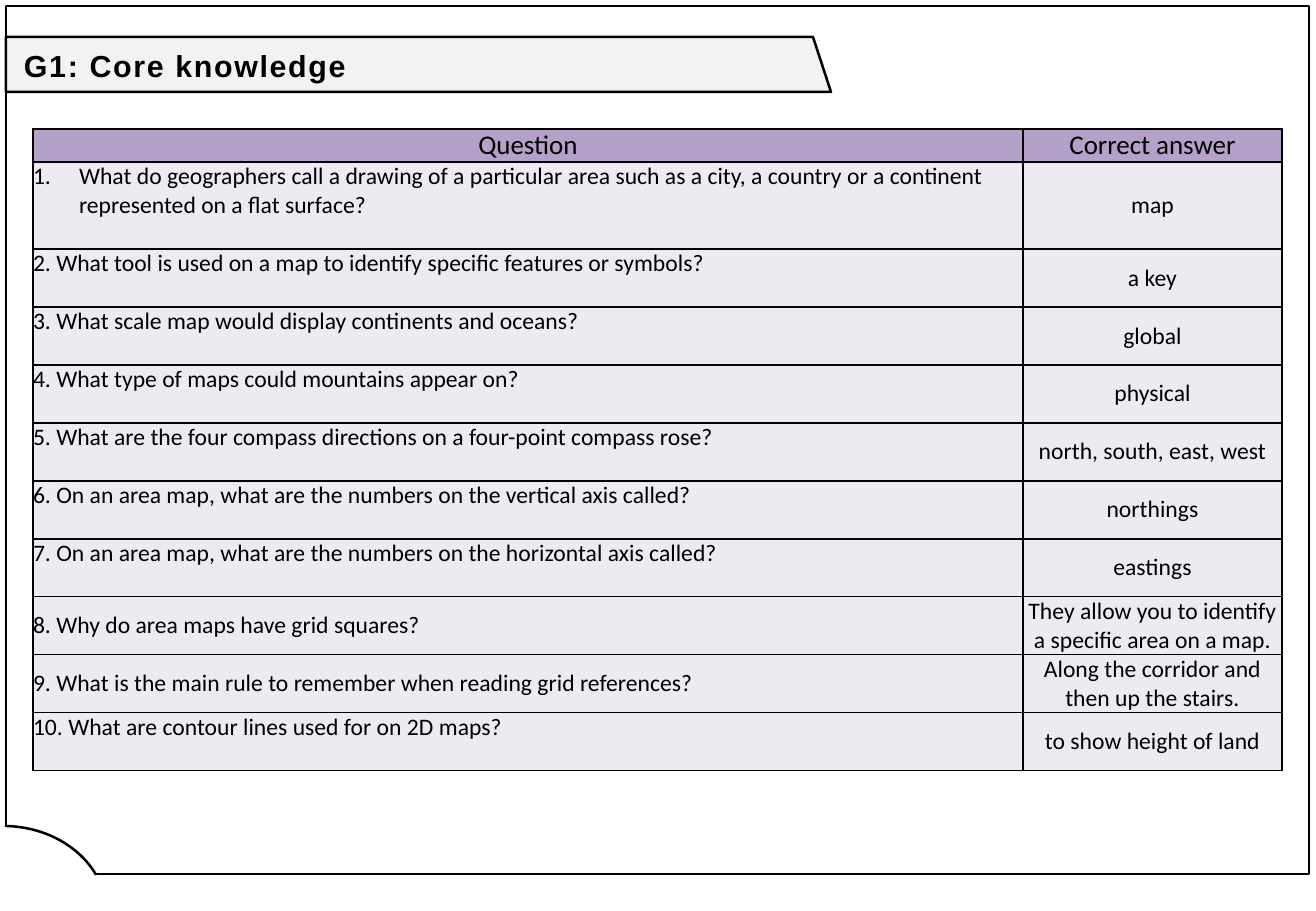
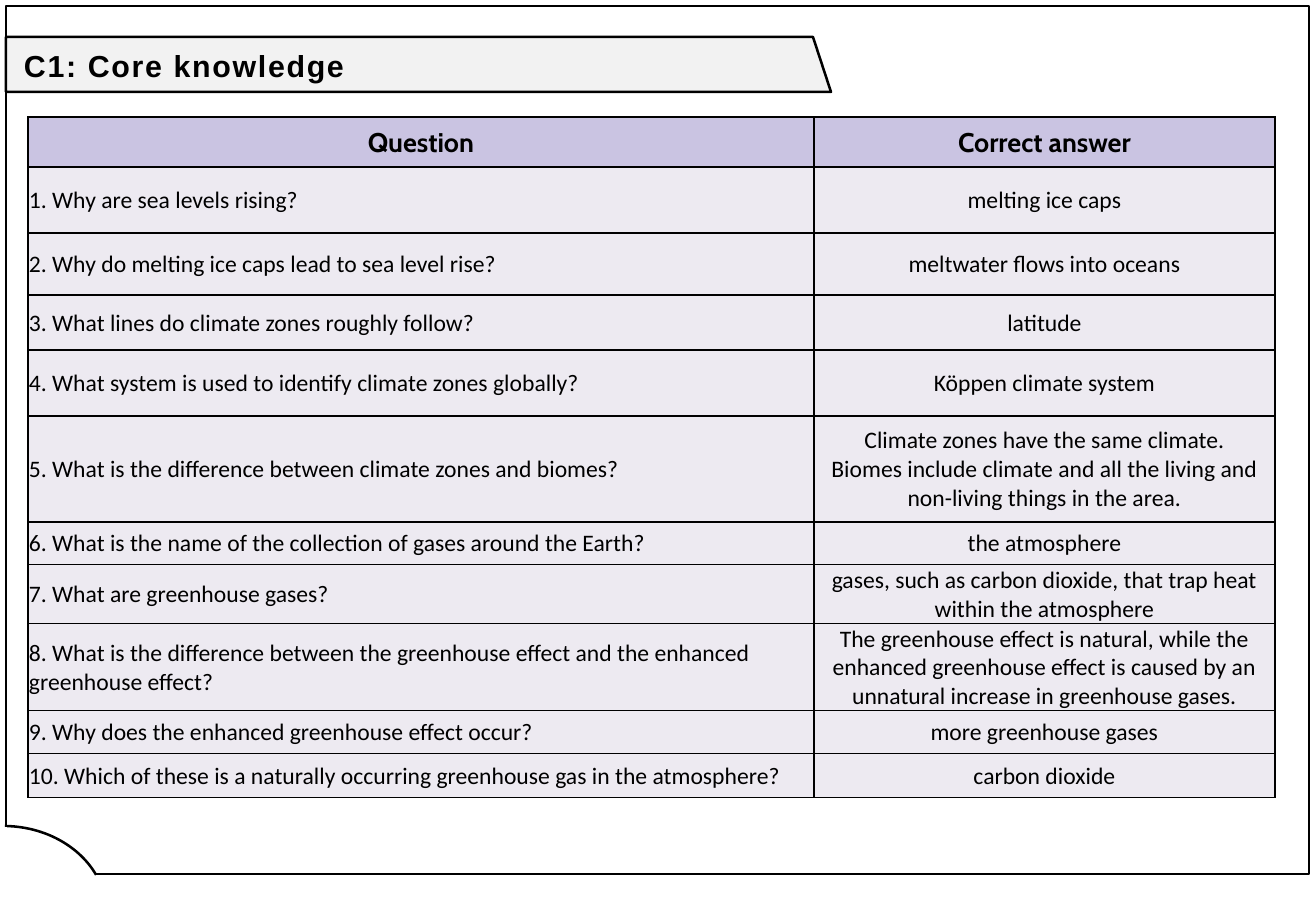
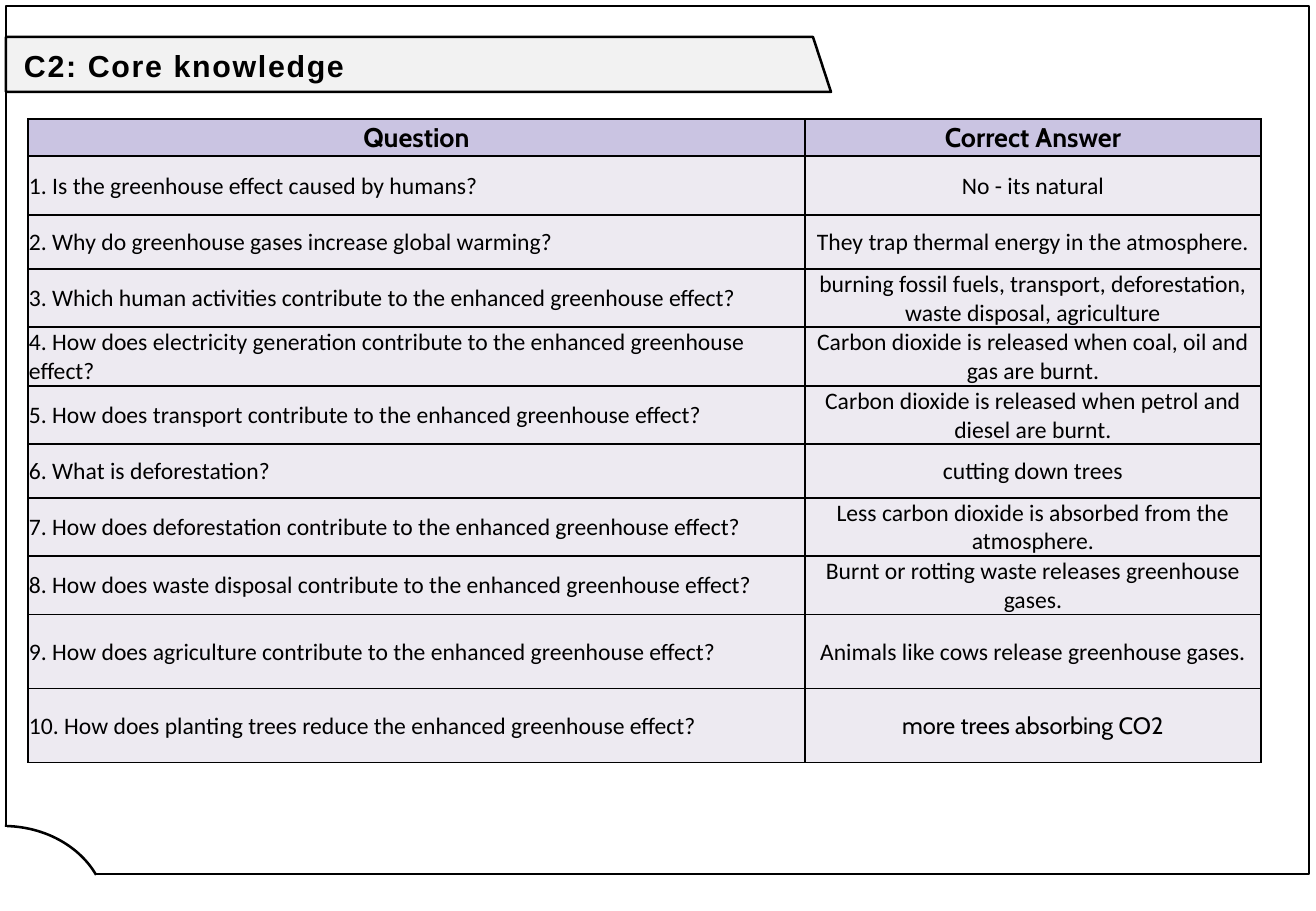
from lxml import etree
from pptx import Presentation
from pptx import util as u
from pptx.dml.color import RGBColor
from pptx.enum import shapes, text
from pptx.oxml import ns

PX = u.Inches(1) / 121.5
BLACK = RGBColor(0x00, 0x00, 0x00)
WHITE = RGBColor(0xFF, 0xFF, 0xFF)
BAND_GREY = RGBColor(0xF2, 0xF2, 0xF2)
HEADER_PURPLE = RGBColor(0xB4, 0xA1, 0xCA)
HEADER_LILAC = RGBColor(0xCA, 0xC4, 0xE2)
ROW_LILAC = RGBColor(0xED, 0xEA, 0xF1)

QUIZZES = [
    {
        "title": "G1: Core knowledge",
        "origin": (33, 129), "columns": (990, 259),
        "heights": [33, 87] + [58] * 9,
        "header": ("Question", "Correct answer"),
        "header_font": "Calibri", "header_bold": False, "header_fill": HEADER_PURPLE,
        "inset": 0,
        "top_questions": {1, 2, 3, 4, 5, 6, 7, 10},
        "auto_numbered": {1},
        "cabin_answers": set(),
        "rows": [
            ("What do geographers call a drawing of a particular area such as a city, "
             "a country or a continent represented on a flat surface?", "map"),
            ("2. What tool is used on a map to identify specific features or symbols?", "a key"),
            ("3. What scale map would display continents and oceans?", "global"),
            ("4. What type of maps could mountains appear on?", "physical"),
            ("5. What are the four compass directions on a four-point compass rose?",
             "north, south, east, west"),
            ("6. On an area map, what are the numbers on the vertical axis called?", "northings"),
            ("7. On an area map, what are the numbers on the horizontal axis called?", "eastings"),
            ("8. Why do area maps have grid squares?",
             "They allow you to identify a specific area on a map."),
            ("9. What is the main rule to remember when reading grid references?",
             "Along the corridor and then up the stairs."),
            ("10. What are contour lines used for on 2D maps?", "to show height of land"),
        ],
    },
    {
        "title": "C1: Core knowledge",
        "origin": (28, 117), "columns": (786, 461),
        "heights": [50, 66, 62, 55, 66, 106, 43, 59, 87, 43, 44],
        "header": ("Question", "Correct answer"),
        "header_font": "Cabin", "header_bold": True, "header_fill": HEADER_LILAC,
        "inset": 1,
        "top_questions": set(),
        "auto_numbered": set(),
        "cabin_answers": set(),
        "rows": [
            ("1. Why are sea levels rising?", "melting ice caps"),
            ("2. Why do melting ice caps lead to sea level rise?", "meltwater flows into oceans"),
            ("3. What lines do climate zones roughly follow?", "latitude"),
            ("4. What system is used to identify climate zones globally?",
             "Köppen climate system"),
            ("5. What is the difference between climate zones and biomes?",
             "Climate zones have the same climate.\n"
             "Biomes include climate and all the living and non-living things in the area."),
            ("6. What is the name of the collection of gases around the Earth?",
             "the atmosphere"),
            ("7. What are greenhouse gases?",
             "gases, such as carbon dioxide, that trap heat within the atmosphere"),
            ("8. What is the difference between the greenhouse effect and the enhanced "
             "greenhouse effect?",
             "The greenhouse effect is natural, while the enhanced greenhouse effect is "
             "caused by an unnatural increase in greenhouse gases."),
            ("9. Why does the enhanced greenhouse effect occur?", "more greenhouse gases"),
            ("10. Which of these is a naturally occurring greenhouse gas in the atmosphere?",
             "carbon dioxide"),
        ],
    },
    {
        "title": "C2: Core knowledge",
        "origin": (28, 119), "columns": (777, 456),
        "heights": [37, 59, 54, 58, 59, 58, 54, 58, 59, 74, 74],
        "header": ("Question", "Correct Answer"),
        "header_font": "Cabin", "header_bold": True, "header_fill": HEADER_LILAC,
        "inset": 1,
        "top_questions": set(),
        "auto_numbered": set(),
        "cabin_answers": {10},
        "rows": [
            ("1. Is the greenhouse effect caused by humans?", "No - its natural"),
            ("2. Why do greenhouse gases increase global warming?",
             "They trap thermal energy in the atmosphere."),
            ("3. Which human activities contribute to the enhanced greenhouse effect?",
             "burning fossil fuels, transport, deforestation, waste disposal, agriculture"),
            ("4. How does electricity generation contribute to the enhanced greenhouse effect?",
             "Carbon dioxide is released when coal, oil and gas are burnt."),
            ("5. How does transport contribute to the enhanced greenhouse effect?",
             "Carbon dioxide is released when petrol and diesel are burnt."),
            ("6. What is deforestation?", "cutting down trees"),
            ("7. How does deforestation contribute to the enhanced greenhouse effect?",
             "Less carbon dioxide is absorbed from the atmosphere."),
            ("8. How does waste disposal contribute to the enhanced greenhouse effect?",
             "Burnt or rotting waste releases greenhouse gases."),
            ("9. How does agriculture contribute to the enhanced greenhouse effect?",
             "Animals like cows release greenhouse gases."),
            ("10. How does planting trees reduce the enhanced greenhouse effect?",
             "more trees absorbing CO2"),
        ],
    },
]


def px(*lengths):
    return [u.Emu(round(length * PX)) for length in lengths]


def paint(shape, fill=None, outlined=True):
    """Give a shape its fill and black outline, or none."""
    shape.shadow.inherit = False
    if fill is None:
        shape.fill.background()
    else:
        shape.fill.solid()
        shape.fill.fore_color.rgb = fill
    if outlined:
        shape.line.color.rgb = BLACK
        shape.line.width = u.Pt(1.5)
    else:
        shape.line.fill.background()


deck = Presentation()
deck.slide_width, deck.slide_height = px(1316, 911)

for quiz in QUIZZES:
    page = deck.slides.add_slide(deck.slide_layouts[6])

    # Title band, page frame and cut-out corner
    outline = page.shapes.build_freeform(6, 37, scale=PX)
    outline.add_line_segments([(813, 37), (831, 92), (6, 92)], close=True)
    paint(outline.convert_to_shape(), BAND_GREY)
    paint(page.shapes.add_shape(shapes.MSO_SHAPE.RECTANGLE, *px(6, 6, 1303, 868)))
    corner = page.shapes.add_shape(shapes.MSO_SHAPE.ARC, *px(-100, 826, 207, 176))
    for index, degrees in enumerate((270.88, 337.11)):
        corner.adjustments[index] = degrees * 0.6
    paint(corner, WHITE)
    edge_mask = page.shapes.add_shape(shapes.MSO_SHAPE.RECTANGLE, *px(1, 827, 6, 12))
    paint(edge_mask, WHITE, outlined=False)

    # Title
    box = page.shapes.add_textbox(*px(12, 26, 781, 77))
    box.text_frame.word_wrap = True
    box.text_frame.vertical_anchor = text.MSO_ANCHOR.MIDDLE
    para = box.text_frame.paragraphs[0]
    para.line_spacing = 1.07
    para.space_after = u.Pt(8)
    span = para.add_run()
    span.text = quiz["title"]
    span.font.name = "Arial"
    span.font.size = u.Pt(18)
    span.font.bold = True
    span.font.color.rgb = BLACK
    span.font._element.set("spc", "100")

    # Questions and answers
    rows = [quiz["header"], *quiz["rows"]]
    size = px(sum(quiz["columns"]), sum(quiz["heights"]))
    table = page.shapes.add_table(len(rows), 2, *px(*quiz["origin"]), *size).table
    table.first_row = table.horz_banding = False
    for column, width in zip(table.columns, px(*quiz["columns"])):
        column.width = width
    for row, height in zip(table.rows, px(*quiz["heights"])):
        row.height = height

    for number, row in enumerate(rows):
        for side, content in enumerate(row):
            is_header = number == 0
            is_question = side == 0 and not is_header
            cell = table.cell(number, side)
            cell.margin_left, cell.margin_right, cell.margin_top = px(*[quiz["inset"]] * 3)
            cell.margin_bottom = 0
            at_top = is_question and number in quiz["top_questions"]
            cell.vertical_anchor = text.MSO_ANCHOR.TOP if at_top else text.MSO_ANCHOR.MIDDLE

            properties = cell._tc.get_or_add_tcPr()
            for border in ("a:lnL", "a:lnR", "a:lnT", "a:lnB"):
                line = etree.SubElement(properties, ns.qn(border), w=str(u.Pt(1)))
                solid = etree.SubElement(line, ns.qn("a:solidFill"))
                etree.SubElement(solid, ns.qn("a:srgbClr"), val=str(BLACK))
            cell.fill.solid()
            cell.fill.fore_color.rgb = quiz["header_fill"] if is_header else ROW_LILAC

            for index, words in enumerate(content.split("\n")):
                frame = cell.text_frame
                para = frame.paragraphs[0] if index == 0 else frame.add_paragraph()
                para.alignment = text.PP_ALIGN.LEFT if is_question else text.PP_ALIGN.CENTER
                if is_question and number in quiz["auto_numbered"]:
                    numbering = para._p.get_or_add_pPr()
                    indent = px(46)[0]
                    numbering.set("marL", str(indent))
                    numbering.set("indent", str(-indent))
                    etree.SubElement(numbering, ns.qn("a:buAutoNum"), type="arabicPeriod")
                span = para.add_run()
                span.text = words
                span.font.color.rgb = BLACK
                span.font.size = u.Pt(16 if is_header else 14)
                span.font.bold = is_header and quiz["header_bold"]
                if is_header:
                    span.font.name = quiz["header_font"]
                elif side == 1 and number in quiz["cabin_answers"]:
                    span.font.name = "Cabin"
                else:
                    span.font.name = "Calibri"

deck.save("out.pptx")
